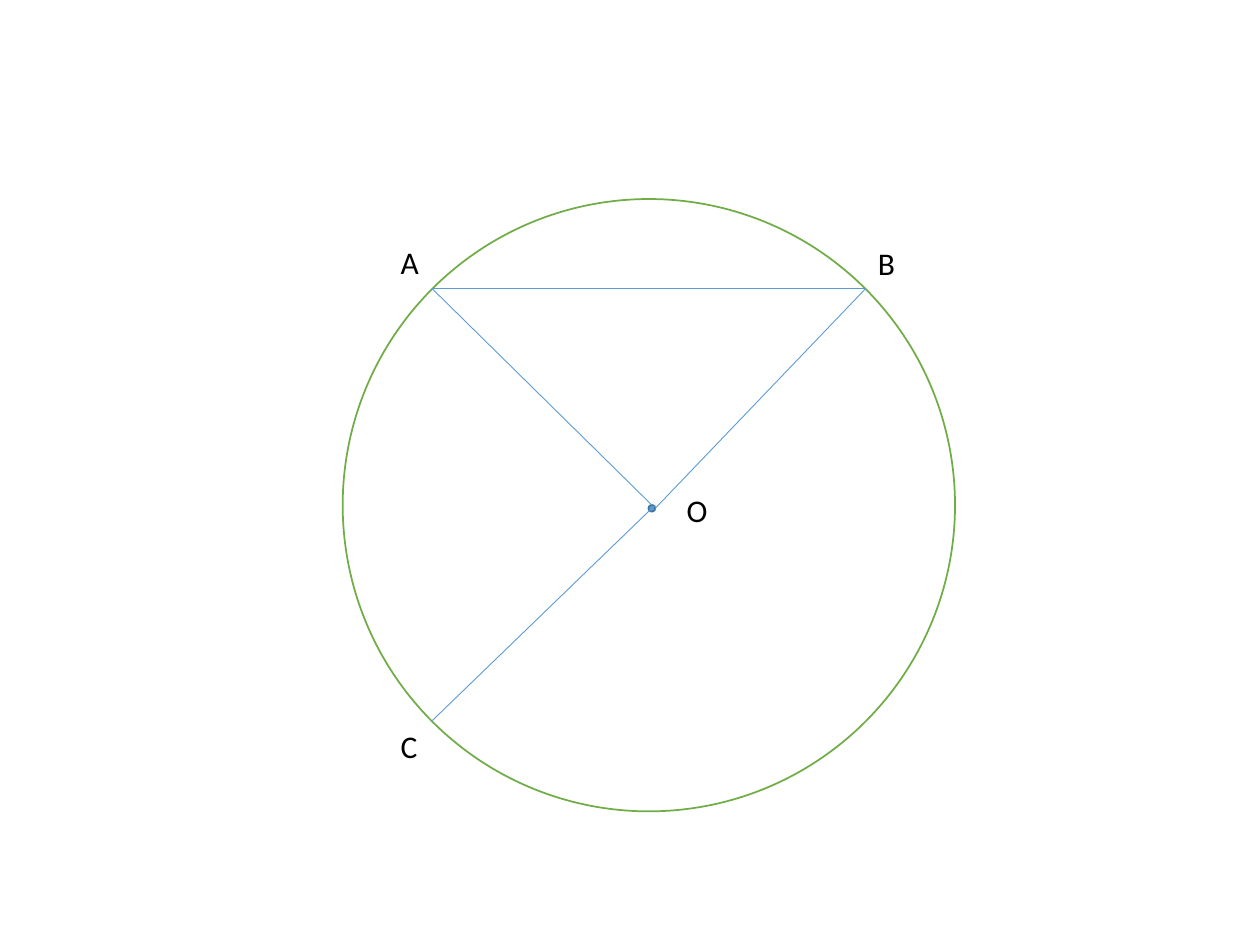
import pptx
import pptx.dml.color
import pptx.enum.shapes
import pptx.enum.text
import pptx.util
from lxml import etree
from pptx.oxml.ns import qn

Pt = pptx.util.Pt
RGBColor = pptx.dml.color.RGBColor

WHITE = RGBColor(0xFF, 0xFF, 0xFF)
BLACK = RGBColor(0x00, 0x00, 0x00)
GREEN = RGBColor(0x70, 0xAD, 0x47)
BLUE = RGBColor(0x5B, 0x9B, 0xD5)
DARK_BLUE = RGBColor(0x43, 0x73, 0x9E)

presentation = pptx.Presentation()
presentation.slide_width = Pt(720)
presentation.slide_height = Pt(540)
slide = presentation.slides.add_slide(presentation.slide_layouts[6])

# Circle and its centre point: left, top, diameter, fill, outline
for left, top, diameter, fill, outline in [
    (195.84, 113.76, 349.92, WHITE, GREEN),
    (370.6, 288.6, 3.8, BLUE, DARK_BLUE),
]:
    circle = slide.shapes.add_shape(
        pptx.enum.shapes.MSO_SHAPE.OVAL,
        Pt(left), Pt(top), Pt(diameter), Pt(diameter))
    circle.shadow.inherit = False
    circle.fill.solid()
    circle.fill.fore_color.rgb = fill
    circle.line.color.rgb = outline
    circle.line.width = Pt(1)

# Points on the circle
point_a = (247, 165)
point_b = (494.6, 165)
point_c = (247, 411.8)

# Radii OA, OB, OC and chord AB
for start, end in [
    ((372.5, 288.6), point_a),
    ((374.4, 290.5), point_b),
    ((374.4, 288.6), point_c),
    (point_a, point_b),
]:
    segment = slide.shapes.add_connector(
        pptx.enum.shapes.MSO_CONNECTOR.STRAIGHT,
        Pt(start[0]), Pt(start[1]), Pt(end[0]), Pt(end[1]))
    segment.line.color.rgb = BLUE
    segment.line.width = Pt(0.5)
    etree.SubElement(segment._element.spPr, qn("a:effectLst"))

# Point names, in Cyrillic letters
for letter, left, top in [
    ("С", 221.8, 411.8),
    ("В", 494.6, 136),
    ("А", 221.8, 135.4),
    ("О", 385.2, 277.2),
]:
    label = slide.shapes.add_textbox(Pt(left), Pt(top), Pt(23), Pt(29))
    text_frame = label.text_frame
    text_frame.word_wrap = False
    text_frame.auto_size = pptx.enum.text.MSO_AUTO_SIZE.SHAPE_TO_FIT_TEXT
    text_frame.text = letter
    font = text_frame.paragraphs[0].runs[0].font
    font.name = "Calibri"
    font.size = Pt(18)
    font.color.rgb = BLACK

presentation.save("out.pptx")
